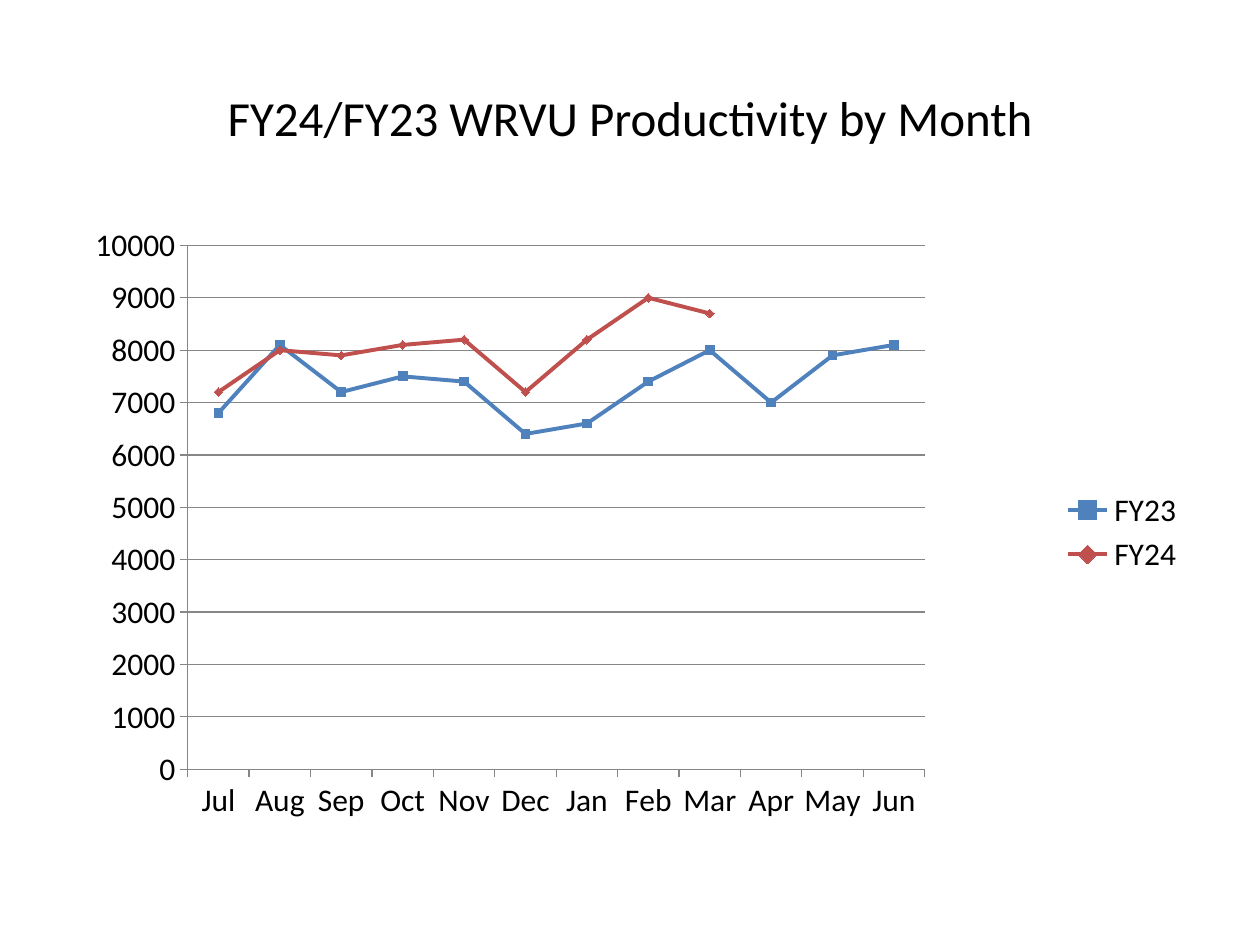
"""Build a slide with a line chart of monthly WRVU productivity for two fiscal years."""
from dataclasses import dataclass

from lxml.etree import SubElement
from pptx import Presentation
from pptx.chart.chart import Chart
from pptx.chart.data import CategoryChartData
from pptx.chart.series import LineSeries
from pptx.dml.color import RGBColor
from pptx.dml.line import LineFormat
from pptx.enum.chart import XL_CHART_TYPE as ChartType
from pptx.enum.chart import XL_LEGEND_POSITION as LegendPosition
from pptx.enum.chart import XL_MARKER_STYLE as MarkerStyle
from pptx.enum.chart import XL_TICK_MARK as TickMark
from pptx.enum.text import MSO_ANCHOR as Anchor
from pptx.enum.text import PP_ALIGN as Align
from pptx.oxml.ns import qn
from pptx.slide import Slide
from pptx.util import Pt

BLACK = RGBColor(0x00, 0x00, 0x00)
GRAY = RGBColor(0x86, 0x86, 0x86)
BLUE = RGBColor(0x4F, 0x81, 0xBD)
RED = RGBColor(0xC0, 0x50, 0x4D)
FONT = "Calibri"
MONTHS = "Jul Aug Sep Oct Nov Dec Jan Feb Mar Apr May Jun".split()


@dataclass(frozen=True)
class Box:
    left: float
    top: float
    width: float
    height: float


@dataclass(frozen=True)
class FiscalYear:
    name: str
    values: tuple[int | None, ...]
    color: RGBColor
    marker: MarkerStyle


TITLE_BOX = Box(36, 21.6, 648, 90)
CHART_BOX = Box(36, 126, 648, 356.4)
PLOT_FRACTIONS = {"x": 0.11, "y": 0.04, "w": 0.65, "h": 0.84}
FISCAL_YEARS = (
    FiscalYear(
        "FY23",
        (6800, 8100, 7200, 7500, 7400, 6400, 6600, 7400, 8000, 7000, 7900, 8100),
        BLUE,
        MarkerStyle.SQUARE,
    ),
    FiscalYear(
        "FY24",
        (7200, 8000, 7900, 8100, 8200, 7200, 8200, 9000, 8700, None, None, None),
        RED,
        MarkerStyle.DIAMOND,
    ),
)


def format_font(font, *, size: float, color: RGBColor = BLACK) -> None:
    font.name = FONT
    font.size = Pt(size)
    font.color.rgb = color


def format_line(line: LineFormat, color: RGBColor, width: float) -> None:
    line.color.rgb = color
    line.width = Pt(width)


def write_text(shape, text: str, *, size: float, align: Align, anchor: Anchor) -> None:
    frame = shape.text_frame
    frame.word_wrap = True
    frame.vertical_anchor = anchor
    paragraph = frame.paragraphs[0]
    paragraph.alignment = align
    run = paragraph.add_run()
    run.text = text
    format_font(run.font, size=size)


def add_title(slide: Slide, text: str, box: Box) -> None:
    title = slide.shapes.title
    title.left, title.top = Pt(box.left), Pt(box.top)
    title.width, title.height = Pt(box.width), Pt(box.height)
    write_text(title, text, size=28, align=Align.CENTER, anchor=Anchor.MIDDLE)


def place_plot(chart: Chart, fractions: dict[str, float]) -> None:
    plot_area = next(chart.element.iter(qn("c:plotArea")))
    layout = plot_area.find(qn("c:layout"))
    if layout is None:
        layout = SubElement(plot_area, qn("c:layout"))
        plot_area.insert(0, layout)
    manual = SubElement(layout, qn("c:manualLayout"))
    settings = {"layoutTarget": "inner", "xMode": "edge", "yMode": "edge", **fractions}
    for name, value in settings.items():
        SubElement(manual, qn(f"c:{name}")).set("val", str(value))


def format_series(series: LineSeries, year: FiscalYear) -> None:
    series.smooth = False
    format_line(series.format.line, year.color, 2.25)
    marker = series.marker
    marker.style = year.marker
    marker.size = 5
    marker.format.fill.solid()
    marker.format.fill.fore_color.rgb = year.color
    format_line(marker.format.line, year.color, 0.75)


def format_axes(chart: Chart) -> None:
    for axis in (chart.category_axis, chart.value_axis):
        axis.major_tick_mark = TickMark.OUTSIDE
        axis.minor_tick_mark = TickMark.NONE
        format_line(axis.format.line, GRAY, 0.75)
    value_axis = chart.value_axis
    value_axis.minimum_scale = 0
    value_axis.maximum_scale = 10000
    value_axis.major_unit = 1000
    value_axis.has_major_gridlines = True
    format_line(value_axis.major_gridlines.format.line, GRAY, 0.75)


def add_line_chart(slide: Slide, box: Box, years: tuple[FiscalYear, ...]) -> None:
    data = CategoryChartData(number_format="General")
    data.categories = MONTHS
    for year in years:
        data.add_series(year.name, year.values)
    chart = slide.shapes.add_chart(
        ChartType.LINE_MARKERS,
        Pt(box.left), Pt(box.top), Pt(box.width), Pt(box.height),
        data,
    ).chart
    format_font(chart.font, size=18)
    chart.has_title = False
    chart.has_legend = True
    chart.legend.position = LegendPosition.RIGHT
    chart.legend.include_in_layout = False
    plot = chart.plots[0]
    plot.vary_by_categories = False
    for series, year in zip(plot.series, years):
        format_series(series, year)
    format_axes(chart)
    place_plot(chart, PLOT_FRACTIONS)


def main() -> None:
    presentation = Presentation()
    presentation.slide_width, presentation.slide_height = Pt(720), Pt(540)
    slide = presentation.slides.add_slide(presentation.slide_layouts[5])
    add_title(slide, "FY24/FY23 WRVU Productivity by Month", TITLE_BOX)
    add_line_chart(slide, CHART_BOX, FISCAL_YEARS)
    presentation.save("out.pptx")


if __name__ == "__main__":
    main()
